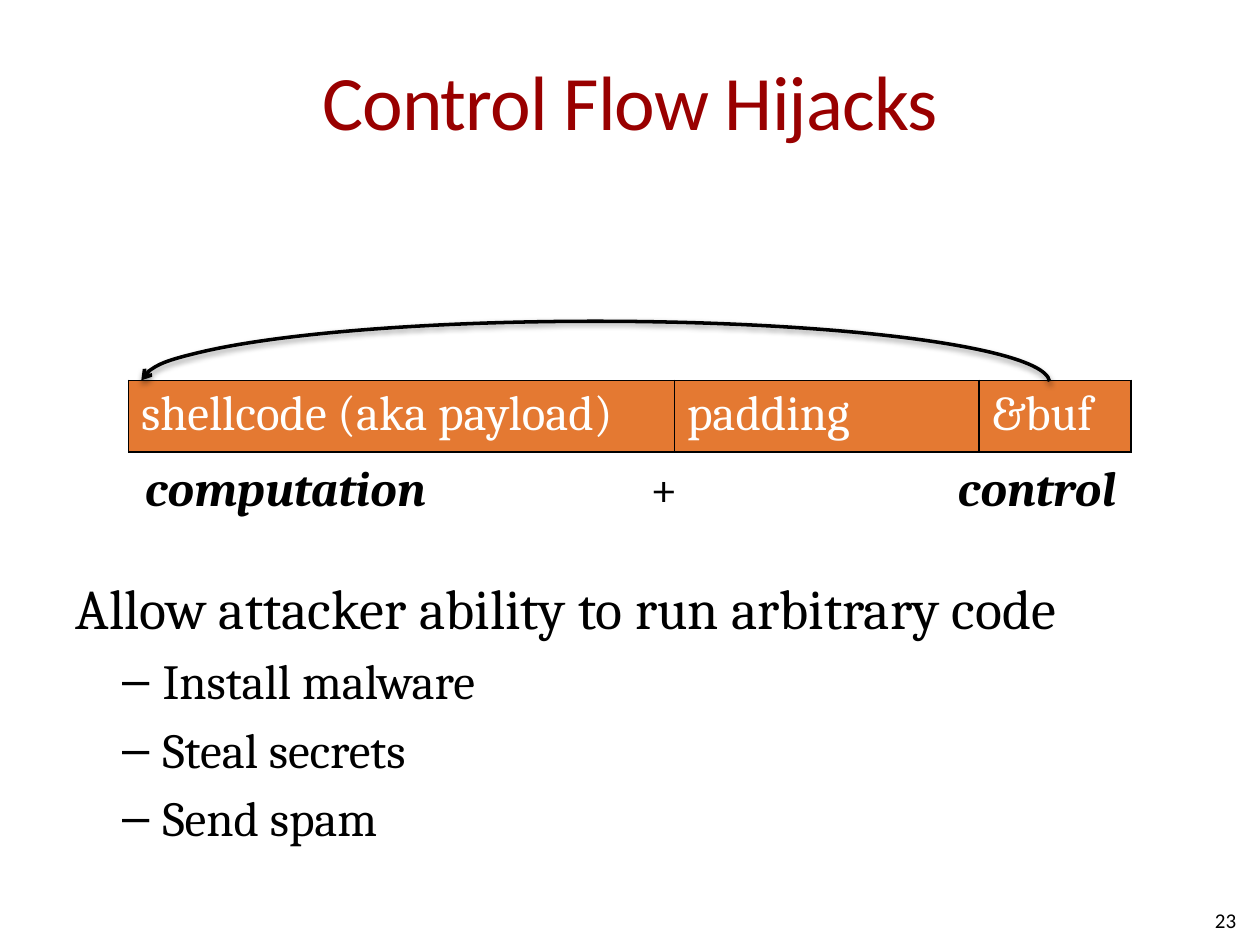
import pptx
import pptx.util
import pptx.dml.color
import pptx.enum.shapes
import pptx.enum.text
import pptx.oxml
import pptx.oxml.ns

Pt = pptx.util.Pt
ALIGN = pptx.enum.text.PP_ALIGN
ANCHOR = pptx.enum.text.MSO_ANCHOR
BLACK = "000000"


def style(font, color, **formats):
    font.color.rgb = pptx.dml.color.RGBColor.from_string(color)
    for name, value in formats.items():
        setattr(font, name, value)


def xml(tag, attributes="", content=""):
    return pptx.oxml.parse_xml(
        f'<a:{tag} {pptx.oxml.ns.nsdecls("a")} {attributes}>{content}</a:{tag}>')


prs = pptx.Presentation()
prs.slide_width, prs.slide_height = Pt(720), Pt(540)
slide = prs.slides.add_slide(prs.slide_layouts[1])
shapes = slide.shapes

# Title
title = shapes.title
title.left, title.top, title.width, title.height = Pt(36), Pt(12.24), Pt(648), Pt(90)
frame = title.text_frame
frame.text = "Control Flow Hijacks"
frame_format = {"margin_left": 0, "margin_right": 0, "vertical_anchor": ANCHOR.MIDDLE,
                "auto_size": pptx.enum.text.MSO_AUTO_SIZE.NONE}
for name, value in frame_format.items():
    setattr(frame, name, value)
heading = frame.paragraphs[0].runs[0]
style(heading.font, "990000", size=Pt(44), name="Calibri")
heading.font._element.set("spc", "-50")

# Slide number
number = shapes.add_textbox(Pt(545.76), Pt(511.2), Pt(167.76), Pt(28.8)).text_frame
number.word_wrap = True
number.vertical_anchor = ANCHOR.MIDDLE
number.text = "23"
number.paragraphs[0].alignment = ALIGN.RIGHT
style(number.paragraphs[0].runs[0].font, BLACK, size=Pt(12), name="Calibri")

# Buffer layout: one row of memory regions
regions = [("shellcode (aka payload)", 312), ("padding", 174), ("&buf", 87)]
buffer_width = sum(width for _, width in regions)
buffer = shapes.add_table(1, len(regions), Pt(73.44), Pt(217.4),
                          Pt(buffer_width), Pt(39.5)).table
for column, (label, width) in enumerate(regions):
    buffer.columns[column].width = Pt(width)
    cell = buffer.cell(0, column)
    cell.text = label
    style(cell.text_frame.paragraphs[0].runs[0].font, "FFFFFE",
          size=Pt(28), name="Cambria", bold=False)
    borders = cell._tc.get_or_add_tcPr()
    for side in ("lnL", "lnR", "lnT", "lnB"):
        borders.append(xml(side, 'w="12700"',
                           f'<a:solidFill><a:srgbClr val="{BLACK}"/></a:solidFill>'))
    cell.fill.solid()
    cell.fill.fore_color.rgb = pptx.dml.color.RGBColor.from_string("E47932")

# Arc from the overwritten address back to the start of the buffer
jump = shapes.add_shape(pptx.enum.shapes.MSO_SHAPE.ARC,
                        Pt(80.64), Pt(183.6), Pt(519.12), Pt(69.84))
jump.adjustments[0], jump.adjustments[1] = 0.078, 107.845
jump._element.spPr.xfrm.set("flipV", "1")
jump.fill.background()
jump.line.width = Pt(2)
jump.line.color.rgb = pptx.dml.color.RGBColor.from_string(BLACK)
jump.line._get_or_add_ln().append(xml("tailEnd", 'type="arrow"'))
jump._element.spPr.append(xml("effectLst", content=(
    '<a:outerShdw blurRad="40000" dist="20000" dir="5400000" rotWithShape="0">'
    f'<a:srgbClr val="{BLACK}"><a:alpha val="38000"/></a:srgbClr></a:outerShdw>')))

# Equation under the buffer, spread out with tab stops
equation = shapes.add_textbox(Pt(36), Pt(257.76), Pt(648), Pt(48.24)).text_frame
equation.word_wrap = True
equation.margin_left = Pt(46.8)
line = equation.paragraphs[0]
line.alignment = ALIGN.LEFT
line.space_before = Pt(5.6)
for text, strong in [("computation", True), ("\t+\t", False), ("control", True)]:
    run = line.add_run()
    run.text = text
    style(run.font, BLACK, size=Pt(28), name="Cambria", bold=strong, italic=strong)
line._p.get_or_add_pPr().append(xml("tabLst", content="".join(
    f'<a:tab pos="{Pt(position)}" algn="{side}"/>'
    for position, side in [(296.6, "ctr"), (555, "r")])))

# Consequences
body = slide.placeholders[1]
body.left, body.top, body.width, body.height = Pt(36), Pt(324), Pt(648), Pt(158.4)
consequences = body.text_frame
consequences.auto_size = pptx.enum.text.MSO_AUTO_SIZE.NONE
lines = [("Allow attacker ability to run arbitrary code", 0), ("Install malware", 1),
         ("Steal secrets", 1), ("Send spam", 1)]
# Per level: text size, left margin, first-line indent, bullet
levels = [(32, 0, 0, xml("buNone")), (28, 49.68, -23.04, xml("buChar", 'char="–"'))]
consequences.text = "\n".join(text for text, _ in lines)
for paragraph, (_, level) in zip(consequences.paragraphs, lines):
    size, margin, indent, bullet = levels[level]
    paragraph.level = level
    style(paragraph.runs[0].font, BLACK, size=Pt(size), name="Cambria")
    properties = paragraph._p.get_or_add_pPr()
    properties.set("marL", str(Pt(margin)))
    properties.set("indent", str(Pt(indent)))
    properties.append(xml(bullet.tag.split("}")[1],
                          " ".join(f'{key}="{value}"' for key, value in bullet.items())))

prs.save("out.pptx")
